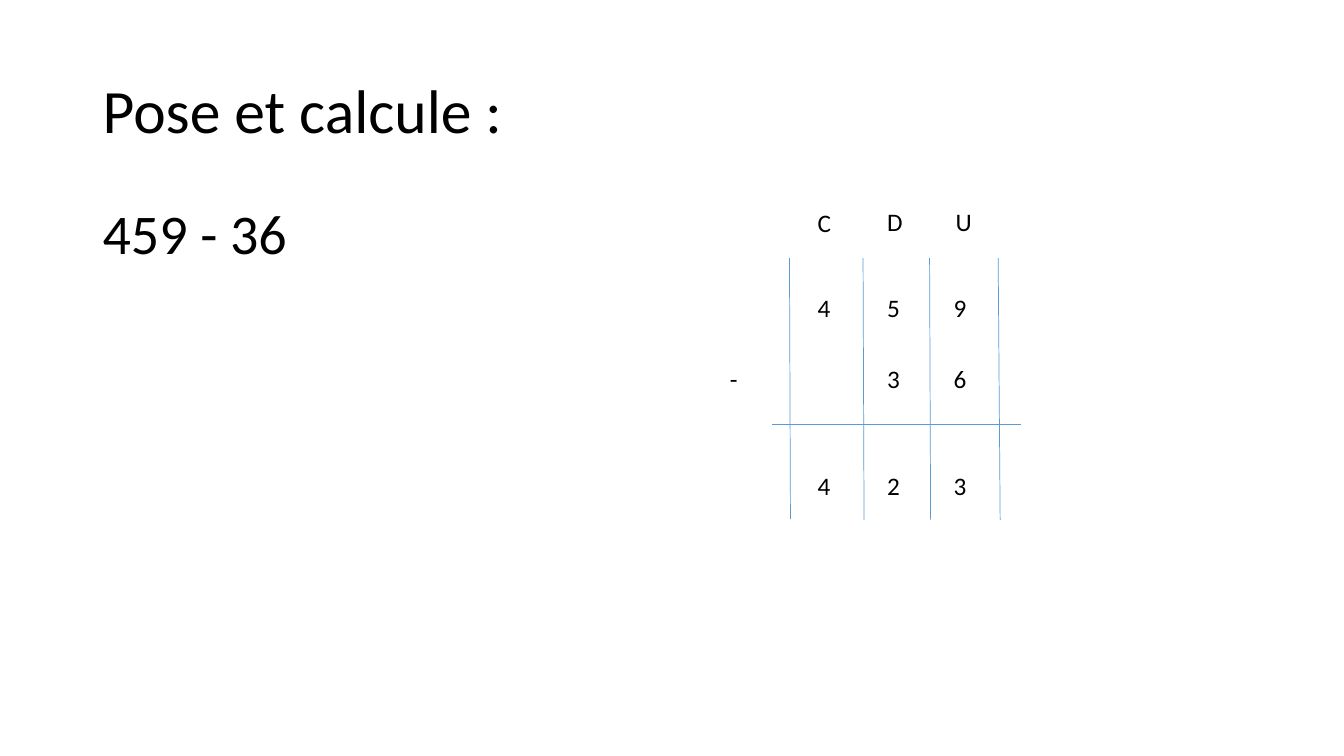
from dataclasses import dataclass

from lxml.etree import SubElement
from pptx import Presentation
from pptx.dml.color import RGBColor
from pptx.enum.shapes import MSO_CONNECTOR
from pptx.enum.text import MSO_ANCHOR, MSO_AUTO_SIZE
from pptx.oxml.ns import qn
from pptx.slide import Slide
from pptx.util import Inches, Pt

FONT = "Calibri"
BLACK = "000000"
BLUE = "5B9BD5"
DIGIT_WIDTH, DIGIT_HEIGHT = 0.39, 0.4
MINUS_LEFT = 7.14
COLUMN_LEFTS = (8.01, 8.7, 9.36)
HEADING_SHIFT = 0.02


@dataclass(frozen=True)
class Label:
    text: str
    left: float
    top: float
    width: float = DIGIT_WIDTH
    height: float = DIGIT_HEIGHT
    size: int = 18
    anchor: MSO_ANCHOR = MSO_ANCHOR.TOP
    line_spacing: float = 1.0
    space_before: int = 0
    grows: bool = False


@dataclass(frozen=True)
class Rule:
    start_x: float
    start_y: float
    end_x: float
    end_y: float


@dataclass(frozen=True)
class DigitRow:
    digits: str
    top: float


def color(value: str) -> RGBColor:
    return RGBColor.from_string(value)


def draw_label(slide: Slide, label: Label) -> None:
    box = slide.shapes.add_textbox(
        Inches(label.left), Inches(label.top), Inches(label.width), Inches(label.height)
    )
    frame = box.text_frame
    frame.word_wrap = True
    frame.auto_size = MSO_AUTO_SIZE.SHAPE_TO_FIT_TEXT if label.grows else MSO_AUTO_SIZE.NONE
    frame.vertical_anchor = label.anchor
    frame.text = label.text
    paragraph = frame.paragraphs[0]
    paragraph.line_spacing = label.line_spacing
    paragraph.space_before = Pt(label.space_before)
    font = paragraph.runs[0].font
    font.name = FONT
    font.size = Pt(label.size)
    font.color.rgb = color(BLACK)


def draw_rule(slide: Slide, rule: Rule) -> None:
    connector = slide.shapes.add_connector(
        MSO_CONNECTOR.STRAIGHT,
        Inches(rule.start_x), Inches(rule.start_y),
        Inches(rule.end_x), Inches(rule.end_y),
    )
    connector.line.color.rgb = color(BLUE)
    connector.line.width = Pt(0.5)
    SubElement(connector._element.spPr, qn("a:effectLst"))


STATEMENT = (
    Label("Pose et calcule :", 0.92, 0.4, 11.5, 1.45, 44, MSO_ANCHOR.MIDDLE, 0.9),
    Label("459 - 36", 0.92, 2, 11.5, 4.76, 40, line_spacing=0.9, space_before=10),
)
COLUMN_RULES = (
    Rule(7.83, 2.56, 7.84, 5.15),
    Rule(8.56, 2.56, 8.57, 5.16),
    Rule(9.22, 2.56, 9.23, 5.16),
    Rule(9.9, 2.56, 9.92, 5.16),
)
RESULT_RULE = Rule(7.66, 4.21, 10.13, 4.21)
HEADINGS = (
    Label("C", COLUMN_LEFTS[0], 2.01, grows=True),
    Label("D", COLUMN_LEFTS[1], 2, grows=True),
    Label("U", COLUMN_LEFTS[2] + HEADING_SHIFT, 2, grows=True),
)
SUBTRAHEND = DigitRow("36", 3.56)
DIGIT_ROWS = (DigitRow("459", 2.85), SUBTRAHEND, DigitRow("423", 4.62))


def draw_digits(slide: Slide, row: DigitRow) -> None:
    for left, digit in zip(COLUMN_LEFTS[-len(row.digits):], row.digits):
        draw_label(slide, Label(digit, left, row.top, grows=True))


def main() -> None:
    presentation = Presentation()
    presentation.slide_width = Inches(13.33)
    presentation.slide_height = Inches(7.5)
    slide = presentation.slides.add_slide(presentation.slide_layouts[6])
    for label in STATEMENT:
        draw_label(slide, label)
    for rule in COLUMN_RULES:
        draw_rule(slide, rule)
    for heading in HEADINGS:
        draw_label(slide, heading)
    for row in DIGIT_ROWS:
        draw_digits(slide, row)
    draw_label(slide, Label("-", MINUS_LEFT, SUBTRAHEND.top, grows=True))
    draw_rule(slide, RESULT_RULE)
    presentation.save("out.pptx")


if __name__ == "__main__":
    main()
